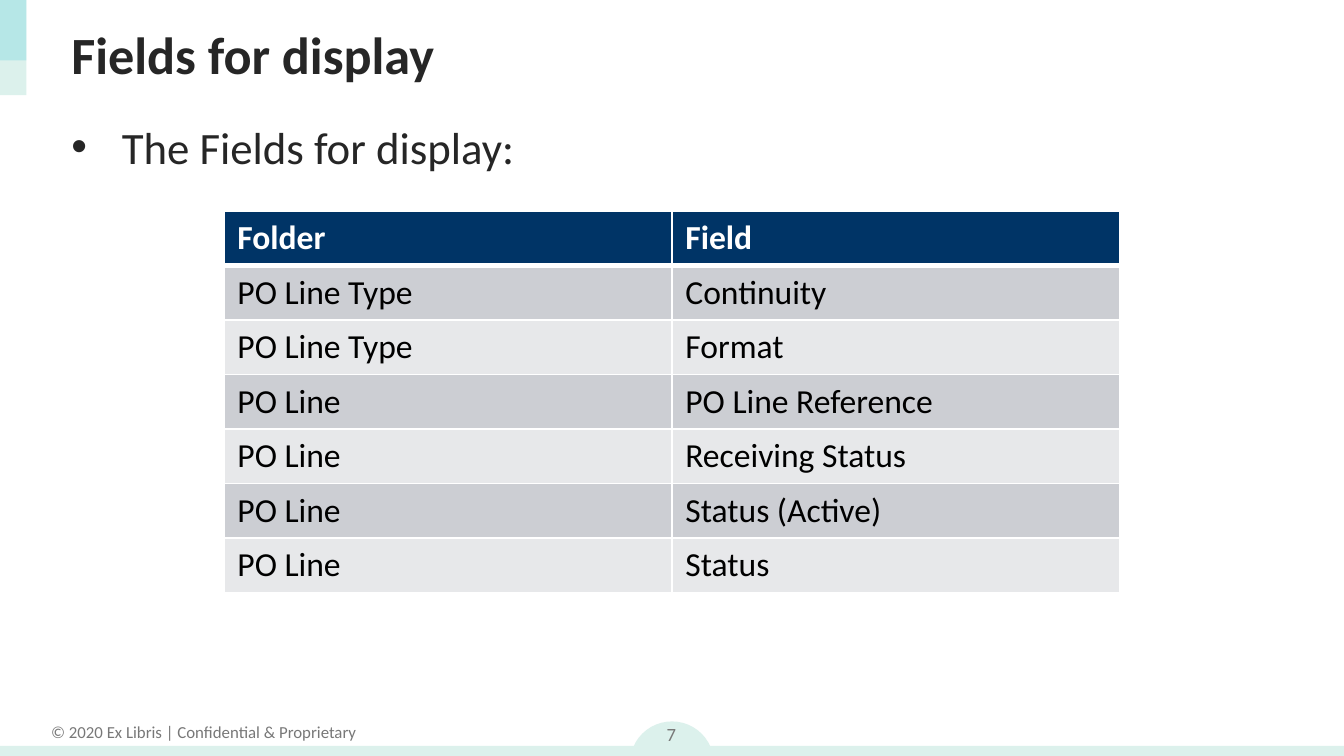
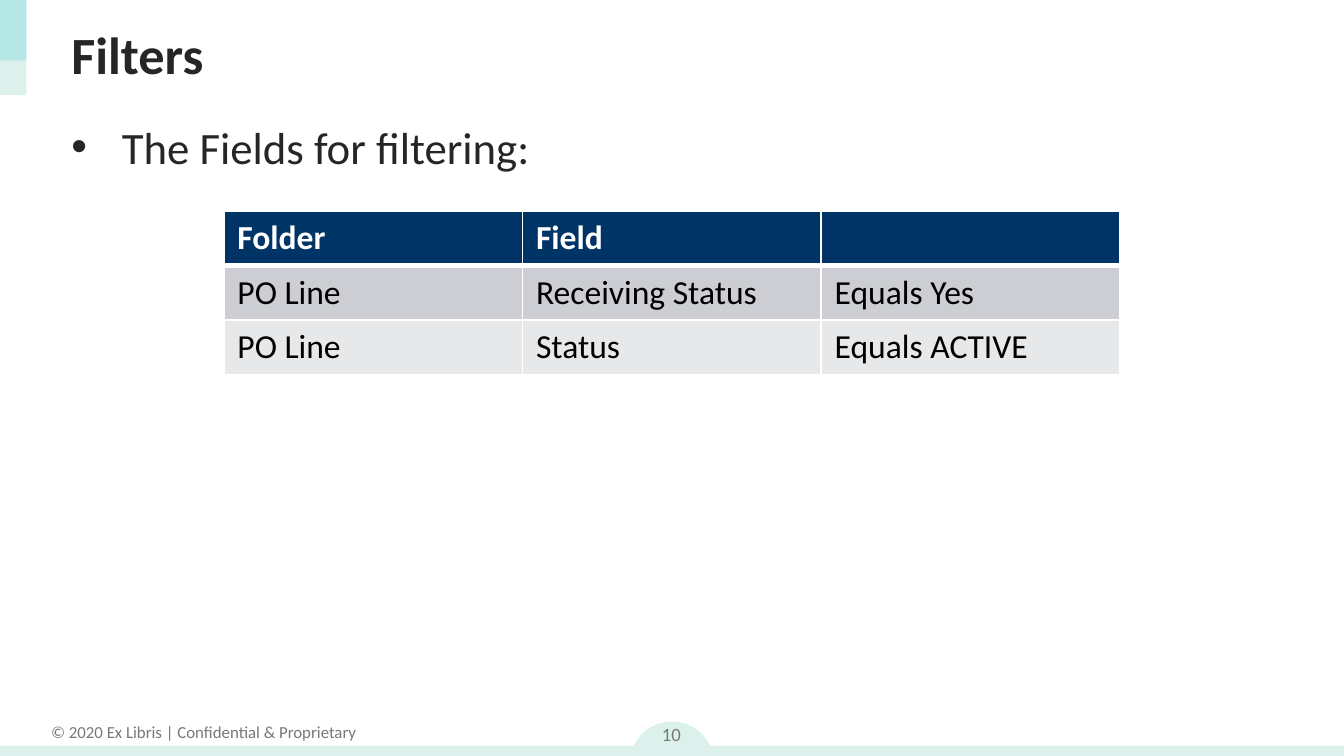
from lxml.etree import SubElement
from pptx import Presentation
from pptx.dml.color import RGBColor
from pptx.enum.shapes import MSO_SHAPE as Preset
from pptx.enum.text import MSO_ANCHOR as Anchor, MSO_AUTO_SIZE as AutoSize, PP_ALIGN as Align
from pptx.oxml.ns import qn
from pptx.util import Pt

COLORS = {
    "navy": "003466",
    "mint": "DCF1EC",
    "turquoise": "50CFDA",
    "text": "262626",
    "footer": "787878",
    "dark row": "CCCED3",
    "light row": "E7E8EA",
    "white": "FFFFFF",
    "black": "000000",
}
FONT = "Calibri"
COPYRIGHT = "© 2020 Ex Libris | Confidential & Proprietary"
TABLE_LEFT, TABLE_TOP, TABLE_WIDTH, ROW_HEIGHT = 120, 113, 480, 29.2

# Preset, left, top, width, height, color, opacity in percent
DECORATIONS = [
    (Preset.OVAL, 337.5, 386.5, 45, 45, "mint", 100),
    (Preset.RECTANGLE, 0, 399.6, 720, 8, "mint", 100),
    (Preset.RECTANGLE, 0, 0, 14.2, 51, "mint", 100),
    (Preset.RECTANGLE, 0, 0, 14.2, 32.4, "turquoise", 27),
]

# Number, title, lead-in, table rows
SLIDES = [
    ("7", "Fields for display", "The Fields for display:", [
        ("Folder", "Field"),
        ("PO Line Type", "Continuity"),
        ("PO Line Type", "Format"),
        ("PO Line", "PO Line Reference"),
        ("PO Line", "Receiving Status"),
        ("PO Line", "Status (Active)"),
        ("PO Line", "Status"),
    ]),
    ("10", "Filters", "The Fields for filtering:", [
        ("Folder", "Field", ""),
        ("PO Line", "Receiving Status", "Equals Yes"),
        ("PO Line", "Status", "Equals ACTIVE"),
    ]),
]


def write(frame, text, size, color, bold=False, align=Align.LEFT):
    """Fill a text frame with one formatted paragraph and return it."""
    frame.text = text
    paragraph = frame.paragraphs[0]
    paragraph.alignment = align
    font = paragraph.font
    font.name, font.size, font.bold = FONT, Pt(size), bold
    font.color.rgb = RGBColor.from_string(COLORS[color])
    return paragraph


def add_color(parent, color):
    """Append a color element to a fill or bullet color and return it."""
    return SubElement(parent, qn("a:srgbClr"), val=COLORS[color])


presentation = Presentation()
presentation.slide_width, presentation.slide_height = Pt(720), Pt(405)

for number, title_text, lead_in, rows in SLIDES:
    slide = presentation.slides.add_slide(presentation.slide_layouts[1])

    for preset, left, top, width, height, color, opacity in DECORATIONS:
        shape = slide.shapes.add_shape(preset, Pt(left), Pt(top), Pt(width), Pt(height))
        shape.shadow.inherit = False
        shape.line.fill.background()
        shape.fill.solid()
        shape.fill.fore_color.rgb = RGBColor.from_string(COLORS[color])
        if opacity < 100:
            fill_color = shape.fill._xPr.find(qn("a:solidFill"))[0]
            SubElement(fill_color, qn("a:alpha"), val=str(opacity * 1000))

    footer = slide.shapes.add_textbox(Pt(19.4), Pt(383), Pt(179.3), Pt(18))
    footer.text_frame.word_wrap = False
    write(footer.text_frame, COPYRIGHT, 9, "footer", align=Align.CENTER)

    page = slide.shapes.add_textbox(Pt(338.4), Pt(378.7), Pt(42.5), Pt(28.8))
    page.text_frame.word_wrap = True
    page.text_frame.vertical_anchor = Anchor.MIDDLE
    write(page.text_frame, number, 10, "footer", align=Align.CENTER)

    title, body = slide.shapes.title, slide.placeholders[1]
    for placeholder, top, height, anchor in (
        (title, 5.8, 45.4, Anchor.MIDDLE),
        (body, 60.5, 39.6, Anchor.TOP),
    ):
        placeholder.left, placeholder.top = Pt(31), Pt(top)
        placeholder.width, placeholder.height = Pt(663), Pt(height)
        placeholder.text_frame.auto_size = AutoSize.NONE
        placeholder.text_frame.vertical_anchor = anchor
    write(title.text_frame, title_text, 28, "text", bold=True)

    properties = body.text_frame.paragraphs[0]._p.get_or_add_pPr()
    properties.set("marL", str(Pt(18)))
    properties.set("indent", str(-Pt(18)))
    add_color(SubElement(properties, qn("a:buClr")), "navy")
    SubElement(properties, qn("a:buFont"), typeface="Arial")
    SubElement(properties, qn("a:buChar"), char="•")
    paragraph = write(body.text_frame, lead_in, 24, "text")
    paragraph.space_before = Pt(0)

    table = slide.shapes.add_table(
        len(rows), len(rows[0]), Pt(TABLE_LEFT), Pt(TABLE_TOP),
        Pt(TABLE_WIDTH), Pt(ROW_HEIGHT * len(rows)),
    ).table
    for row_index, values in enumerate(rows):
        table.rows[row_index].height = Pt(ROW_HEIGHT)
        is_header = row_index == 0
        row_fill = "navy" if is_header else ("light row", "dark row")[row_index % 2]
        # The rule below the header is heavier than the others
        top_width = 3 if row_index == 1 else 1
        bottom_width = 3 if is_header else 1
        borders = {"lnL": 1, "lnR": 1, "lnT": top_width, "lnB": bottom_width}
        for column_index, value in enumerate(values):
            cell = table.cell(row_index, column_index)
            cell_properties = cell._tc.get_or_add_tcPr()
            for side, line_width in borders.items():
                line = SubElement(cell_properties, qn(f"a:{side}"), w=str(Pt(line_width)))
                add_color(SubElement(line, qn("a:solidFill")), "white")
            cell.fill.solid()
            cell.fill.fore_color.rgb = RGBColor.from_string(COLORS[row_fill])
            write(cell.text_frame, value, 18, "white" if is_header else "black", bold=is_header)

presentation.save("out.pptx")
